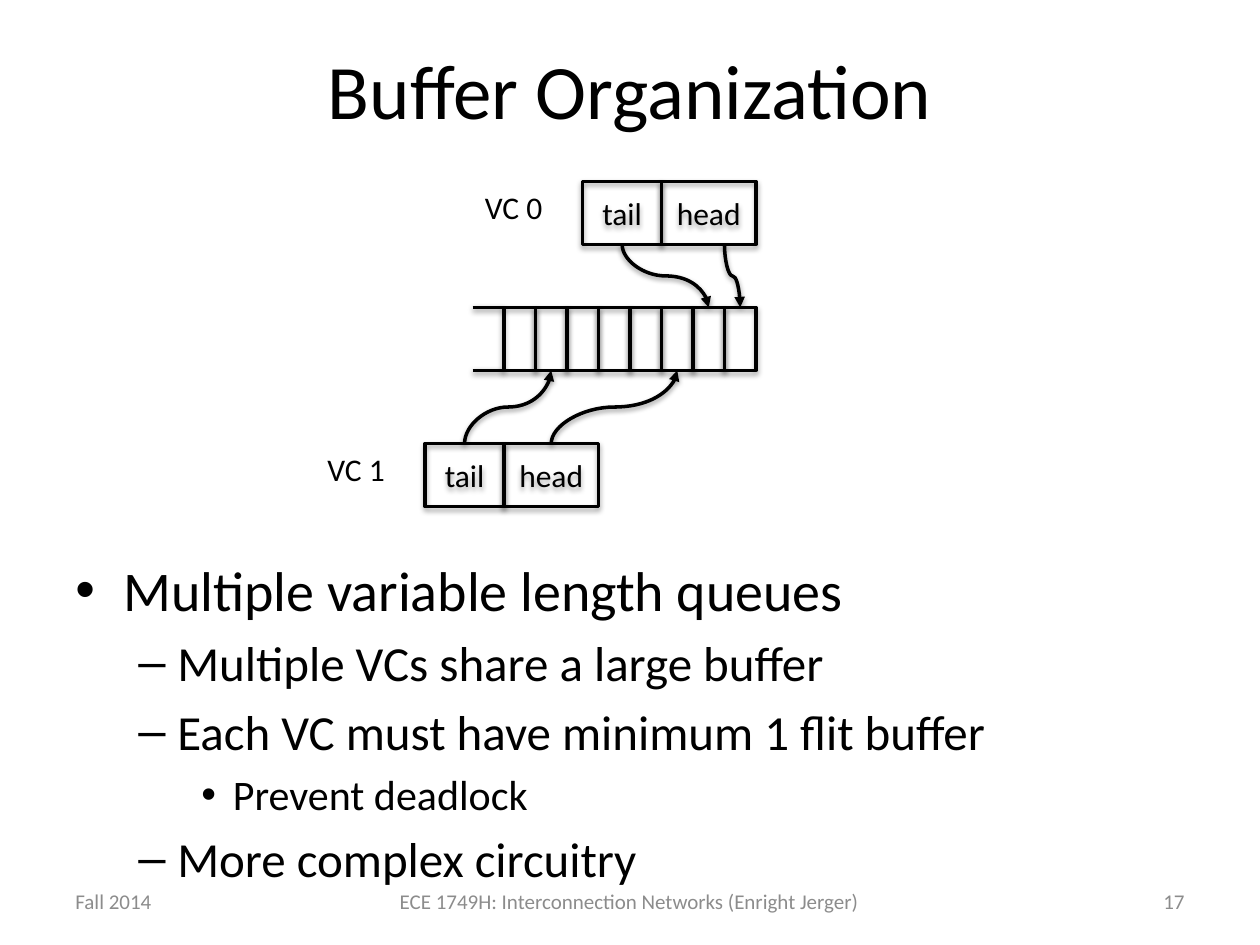
import dataclasses

import lxml.etree
import pptx
import pptx.dml.color
import pptx.enum.shapes
import pptx.enum.text
import pptx.oxml
import pptx.oxml.ns
import pptx.util

Inches = pptx.util.Inches
Align = pptx.enum.text.PP_ALIGN
Anchor = pptx.enum.text.MSO_ANCHOR
Connector = pptx.enum.shapes.MSO_CONNECTOR
qn = pptx.oxml.ns.qn

CELL = 0.25
CELL_COUNT = 8
BOX_HEIGHT = 0.5
BUFFER_LEFT, BUFFER_TOP = 4, 2.44
BUFFER_BOTTOM = BUFFER_TOP + BOX_HEIGHT
TAIL_WIDTH, HEAD_WIDTH = 2.5 * CELL, 3 * CELL
VC0_TOP, VC0_HEAD_LEFT = 1.44, 5.25
VC1_TOP, VC1_HEAD_LEFT = 3.52, 4

BULLETS = [
    (0, "Multiple variable length queues"),
    (1, "Multiple VCs share a large buffer"),
    (1, "Each VC must have minimum 1 flit buffer"),
    (2, "Prevent deadlock"),
    (1, "More complex circuitry"),
]
FOOTERS = [
    (0.5, 2.33, Align.LEFT, "Fall 2014"),
    (2.83, 4.33, Align.CENTER, "ECE 1749H: Interconnection Networks (Enright Jerger)"),
    (7.17, 2.33, Align.RIGHT, "17"),
]


@dataclasses.dataclass(frozen=True)
class Theme:
    font: str = "Calibri"
    ink: str = "000000"
    muted: str = "8C8C8C"
    title_size: int = 44
    label_size: int = 18
    footer_size: int = 12
    line_width: int = 2
    box_shadow: tuple = (35, 1.8)
    line_shadow: tuple = (38, 1.6)
    shadow_blur: float = 3.1
    levels: tuple = ((32, 0.38, 0.38, "•"), (28, 0.81, 0.31, "–"), (24, 1.25, 0.25, "•"))


def set_values(target, values):
    for name, value in values.items():
        setattr(target, name, value)


def add_child(parent, tag, **attributes):
    child = lxml.etree.SubElement(parent, qn(tag))
    for name, value in attributes.items():
        child.set(name, str(value))
    return child


class SlideBuilder:
    """Draw styled elements on the current slide."""

    def __init__(self, slide, theme):
        self.slide = slide
        self.theme = theme

    def add_text(self, paragraph, text, size, color=None, align=None):
        run = paragraph.add_run()
        set_values(run, {"text": text})
        set_values(run.font, {"name": self.theme.font, "size": pptx.util.Pt(size)})
        run.font.color.rgb = pptx.dml.color.RGBColor.from_string(color or self.theme.ink)
        set_values(paragraph, {"alignment": align})

    def outline(self, shape, shadow):
        shape.line.color.rgb = pptx.dml.color.RGBColor.from_string(self.theme.ink)
        shape.line.width = pptx.util.Pt(self.theme.line_width)
        opacity, distance = shadow
        properties = shape._element.spPr
        effects = add_child(properties, "a:effectLst")
        outer = add_child(
            effects, "a:outerShdw", blurRad=pptx.util.Pt(self.theme.shadow_blur),
            dist=pptx.util.Pt(distance), dir=90 * 60000, rotWithShape=0)
        color = add_child(outer, "a:srgbClr", val=self.theme.ink)
        add_child(color, "a:alpha", val=opacity * 1000)

    def title(self, text):
        shape = self.slide.shapes.title
        set_values(shape, {"left": Inches(0.5), "top": Inches(0.08),
                           "width": Inches(9), "height": Inches(1.25)})
        shape.text_frame.vertical_anchor = Anchor.MIDDLE
        self.add_text(shape.text_frame.paragraphs[0], text, self.theme.title_size,
                      align=Align.CENTER)

    def text_box(self, left, top, width, height, anchor=Anchor.TOP):
        shape = self.slide.shapes.add_textbox(
            Inches(left), Inches(top), Inches(width), Inches(height))
        set_values(shape.text_frame, {"word_wrap": True, "vertical_anchor": anchor})
        return shape.text_frame

    def label(self, left, top, text):
        frame = self.text_box(left, top, 0.75, 0.42)
        self.add_text(frame.paragraphs[0], text, self.theme.label_size)

    def footer(self, left, width, align, text):
        frame = self.text_box(left, 6.95, width, 0.4, Anchor.MIDDLE)
        self.add_text(frame.paragraphs[0], text, self.theme.footer_size, self.theme.muted, align)

    def bullets(self, items):
        frame = self.text_box(0.5, 4.36, 9, 2.77)
        for index, (level, text) in enumerate(items):
            paragraph = frame.add_paragraph() if index else frame.paragraphs[0]
            size, margin, hanging, mark = self.theme.levels[level]
            self.add_text(paragraph, text, size)
            paragraph.level = level
            properties = paragraph._p.get_or_add_pPr()
            properties.set("marL", str(Inches(margin)))
            properties.set("indent", str(-Inches(hanging)))
            add_child(add_child(properties, "a:spcBef"), "a:spcPct", val=20000)
            add_child(properties, "a:buFont", typeface="Arial")
            add_child(properties, "a:buChar", char=mark)

    def box(self, left, top, width, text=""):
        shape = self.slide.shapes.add_shape(
            pptx.enum.shapes.MSO_SHAPE.RECTANGLE,
            Inches(left), Inches(top), Inches(width), Inches(BOX_HEIGHT))
        shape.fill.background()
        self.outline(shape, self.theme.box_shadow)
        if text:
            shape.text_frame.vertical_anchor = Anchor.MIDDLE
            self.add_text(shape.text_frame.paragraphs[0], text,
                          self.theme.label_size, align=Align.CENTER)

    def line(self, begin, end, kind=Connector.STRAIGHT):
        connector = self.slide.shapes.add_connector(kind, *map(Inches, (*begin, *end)))
        self.outline(connector, self.theme.line_shadow)
        return connector

    def curved_arrow(self, begin, end):
        """Draw a curve that leaves and arrives vertically, as a box turned by 270 degrees."""
        center_x, center_y = (begin[0] + end[0]) / 2, (begin[1] + end[1]) / 2
        half_x, half_y = (end[0] - begin[0]) / 2, (end[1] - begin[1]) / 2
        connector = self.line((center_x + half_y, center_y - half_x),
                              (center_x - half_y, center_y + half_x), Connector.CURVE)
        properties = connector._element.spPr
        properties.find(qn("a:xfrm")).set("rot", str(270 * 60000))
        add_child(properties.find(qn("a:ln")), "a:tailEnd", type="triangle")

    def channel(self, name, head_left, top):
        tail_left = head_left - TAIL_WIDTH
        self.label(tail_left - 3.5 * CELL, top, name)
        self.box(tail_left, top, TAIL_WIDTH, "tail")
        self.box(head_left, top, HEAD_WIDTH, "head")


def cell_middle(index):
    return BUFFER_LEFT + (index + 0.5) * CELL


def main():
    presentation = pptx.Presentation()
    set_values(presentation, {"slide_width": Inches(10), "slide_height": Inches(7.5)})
    slide = presentation.slides.add_slide(presentation.slide_layouts[5])
    builder = SlideBuilder(slide, Theme())

    builder.title("Buffer Organization")
    builder.bullets(BULLETS)
    for index in range(CELL_COUNT):
        builder.box(BUFFER_LEFT + index * CELL, BUFFER_TOP, CELL)
    for y in (BUFFER_TOP, BUFFER_BOTTOM):
        builder.line((BUFFER_LEFT - CELL, y), (BUFFER_LEFT, y))

    builder.channel("VC 0", VC0_HEAD_LEFT, VC0_TOP)
    builder.channel("VC 1", VC1_HEAD_LEFT, VC1_TOP)

    vc0_bottom = VC0_TOP + BOX_HEIGHT
    for x, cell in ((VC0_HEAD_LEFT + 2 * CELL, 7), (VC0_HEAD_LEFT - TAIL_WIDTH / 2, 6)):
        builder.curved_arrow((x, vc0_bottom), (cell_middle(cell), BUFFER_TOP))
    for x, cell in ((VC1_HEAD_LEFT + HEAD_WIDTH / 2, 5), (VC1_HEAD_LEFT - TAIL_WIDTH / 2, 1)):
        builder.curved_arrow((x, VC1_TOP), (cell_middle(cell), BUFFER_BOTTOM))

    for footer in FOOTERS:
        builder.footer(*footer)
    presentation.save("out.pptx")


if __name__ == "__main__":
    main()
